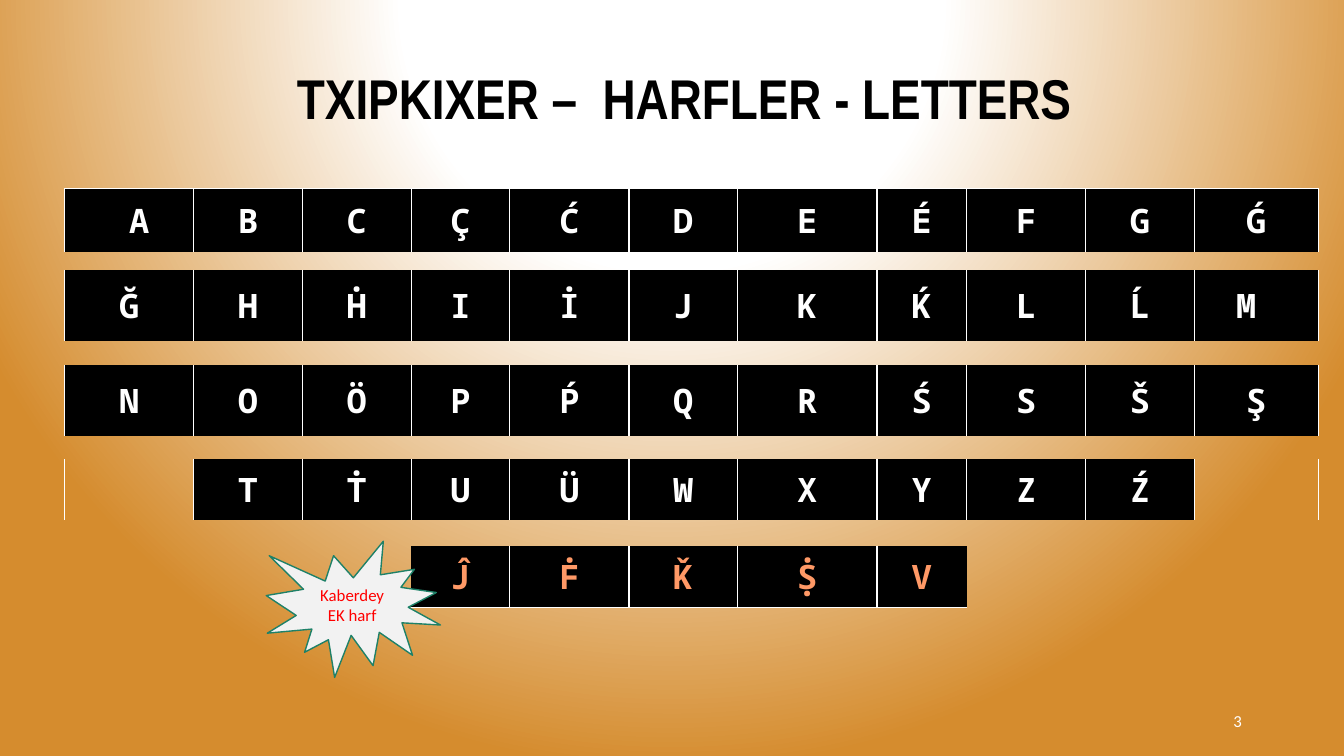
from lxml import etree
from pptx import Presentation
from pptx.dml.color import RGBColor
from pptx.enum.shapes import MSO_SHAPE as Shape
from pptx.enum.text import MSO_ANCHOR as Anchor, PP_ALIGN as Align
from pptx.oxml import parse_xml
from pptx.oxml.ns import qn
from pptx.util import Cm, Pt

TITLE = "TXIPKIXER –  HARFLER - LETTERS"
LETTER_ROWS = [
    " A|B|C|Ç|Ć|D|E|É|F|G|Ǵ".split("|"),
    "Ğ|H|Ḣ|I|İ|J|K|Ḱ|L|Ĺ|M ".split("|"),
    "N|O|Ö|P|Ṕ|Q|R|Ś|S|Š|Ş".split("|"),
    "|T|Ṫ|U|Ü|W|X|Y|Z|Ź|".split("|"),
    "|||Ĵ|Ḟ|Ǩ|Ṩ|V|||".split("|"),
]
BURST_TEXT = "Kaberdey EK harf"
PAGE_NUMBER = "3"
COLUMN_WIDTHS = [3.25, 2.74, 2.74, 2.49, 3, 2.74, 3.51, 2.26, 3, 2.74, 3.12]
ROW_HEIGHTS = [1.6, 0.46, 1.78, 0.61, 1.78, 0.58, 1.55, 0.64, 1.55]

BLACK = RGBColor(0x00, 0x00, 0x00)
WHITE = RGBColor(0xFF, 0xFF, 0xFF)
ORANGE = RGBColor(0xD5, 0x8C, 0x2E)
PEACH = RGBColor(0xFF, 0x99, 0x66)
RED = RGBColor(0xFF, 0x00, 0x00)
PALE_GRAY = RGBColor(0xF2, 0xF2, 0xF2)
GREEN = RGBColor(0x1E, 0x81, 0x68)

DRAWING = "http://schemas.openxmlformats.org/drawingml/2006/main"
NO_STYLE = "{2D5ABB26-0587-4C30-8999-92F81FD0307C}"


def write(frame, text, size, font, color, align, bold=False):
    frame.word_wrap = True
    frame.vertical_anchor = Anchor.MIDDLE
    para = frame.paragraphs[0]
    para.alignment = align
    span = para.add_run()
    span.text = text
    span.font.size = Pt(size)
    span.font.name = font
    span.font.bold = bold
    span.font.color.rgb = color
    return para


def paint_background(page):
    page.background.fill.solid()
    old_fill = page.background.fill._xPr.find(qn("a:solidFill"))
    stops = "".join(
        f'<a:gs pos="{pos * 1000}"><a:srgbClr val="{color}"/></a:gs>'
        for pos, color in [(0, WHITE), (35, WHITE), (100, ORANGE)]
    )
    gradient = parse_xml(
        f'<a:gradFill xmlns:a="{DRAWING}" rotWithShape="1"><a:gsLst>{stops}</a:gsLst>'
        '<a:path path="circle"><a:fillToRect l="50000" t="-80000" r="50000" b="180000"/>'
        "</a:path></a:gradFill>"
    )
    old_fill.getparent().replace(old_fill, gradient)


def add_borders(cell, sides):
    props = cell._tc.get_or_add_tcPr()
    for side in "LRTB":
        line = etree.SubElement(props, qn(f"a:ln{side}"), w=str(Pt(1)))
        if side in sides:
            fill = etree.SubElement(line, qn("a:solidFill"))
            etree.SubElement(fill, qn("a:srgbClr"), val=str(WHITE))
        else:
            etree.SubElement(line, qn("a:noFill"))


def border_sides(row, column):
    last_row = len(LETTER_ROWS) - 1
    letters = LETTER_ROWS[row]
    if row < last_row:
        return "LRT" if row == 0 else "LR"
    if not letters[column]:
        return ""
    left = "L" if letters[column - 1] else ""
    right = "R" if letters[column + 1] else ""
    return left + right + "B"


def fill_cell(cell, letter, sides, color):
    cell.margin_left = cell.margin_right = cell.margin_top = Cm(0.02)
    cell.margin_bottom = 0
    cell.vertical_anchor = Anchor.MIDDLE
    add_borders(cell, sides)
    if letter:
        cell.fill.solid()
        cell.fill.fore_color.rgb = BLACK
        write(cell.text_frame, letter, 24, "Noto Sans Mono", color, Align.CENTER, True)
    else:
        cell.fill.background()
        etree.SubElement(cell.text_frame.paragraphs[0]._p, qn("a:endParaRPr"), sz="400")


def add_letter_table(page):
    frame = page.shapes.add_table(
        len(ROW_HEIGHTS), len(COLUMN_WIDTHS), Cm(1.63), Cm(4.75),
        Cm(sum(COLUMN_WIDTHS)), Cm(sum(ROW_HEIGHTS)),
    )
    table = frame.table
    table.first_row = table.horz_banding = False
    table._tbl.tblPr.find(qn("a:tableStyleId")).text = NO_STYLE
    for column, width in zip(table.columns, COLUMN_WIDTHS):
        column.width = Cm(width)
    for index, height in enumerate(ROW_HEIGHTS):
        table.rows[index].height = Cm(height)
        row, is_gap = divmod(index, 2)
        color = PEACH if row == len(LETTER_ROWS) - 1 else WHITE
        for column in range(len(COLUMN_WIDTHS)):
            letter = "" if is_gap else LETTER_ROWS[row][column]
            sides = "" if is_gap else border_sides(row, column)
            fill_cell(table.cell(index, column), letter, sides, color)


def main():
    deck = Presentation()
    deck.slide_width, deck.slide_height = Cm(33.87), Cm(19.05)
    page = deck.slides.add_slide(deck.slide_layouts[5])
    paint_background(page)

    title = page.shapes.title
    title.left, title.top, title.width, title.height = Cm(4.9), Cm(1.85), Cm(24.69), Cm(1.6)
    para = write(title.text_frame, TITLE, 40, "Arial Narrow", BLACK, Align.CENTER, True)
    para.line_spacing = 0.7

    add_letter_table(page)

    burst = page.shapes.add_shape(Shape.EXPLOSION1, Cm(6.71), Cm(13.64), Cm(4.39), Cm(3.43))
    burst.shadow.inherit = False
    burst.fill.solid()
    burst.fill.fore_color.rgb = PALE_GRAY
    burst.line.color.rgb = GREEN
    burst.line.width = Pt(1)
    write(burst.text_frame, BURST_TEXT, 12, "Calibri", RED, Align.CENTER)

    number_box = page.shapes.add_textbox(Cm(23.93), Cm(17.65), Cm(7.62), Cm(1.02))
    write(number_box.text_frame, PAGE_NUMBER, 12, "Calibri", WHITE, Align.RIGHT)

    deck.save("out.pptx")


if __name__ == "__main__":
    main()
